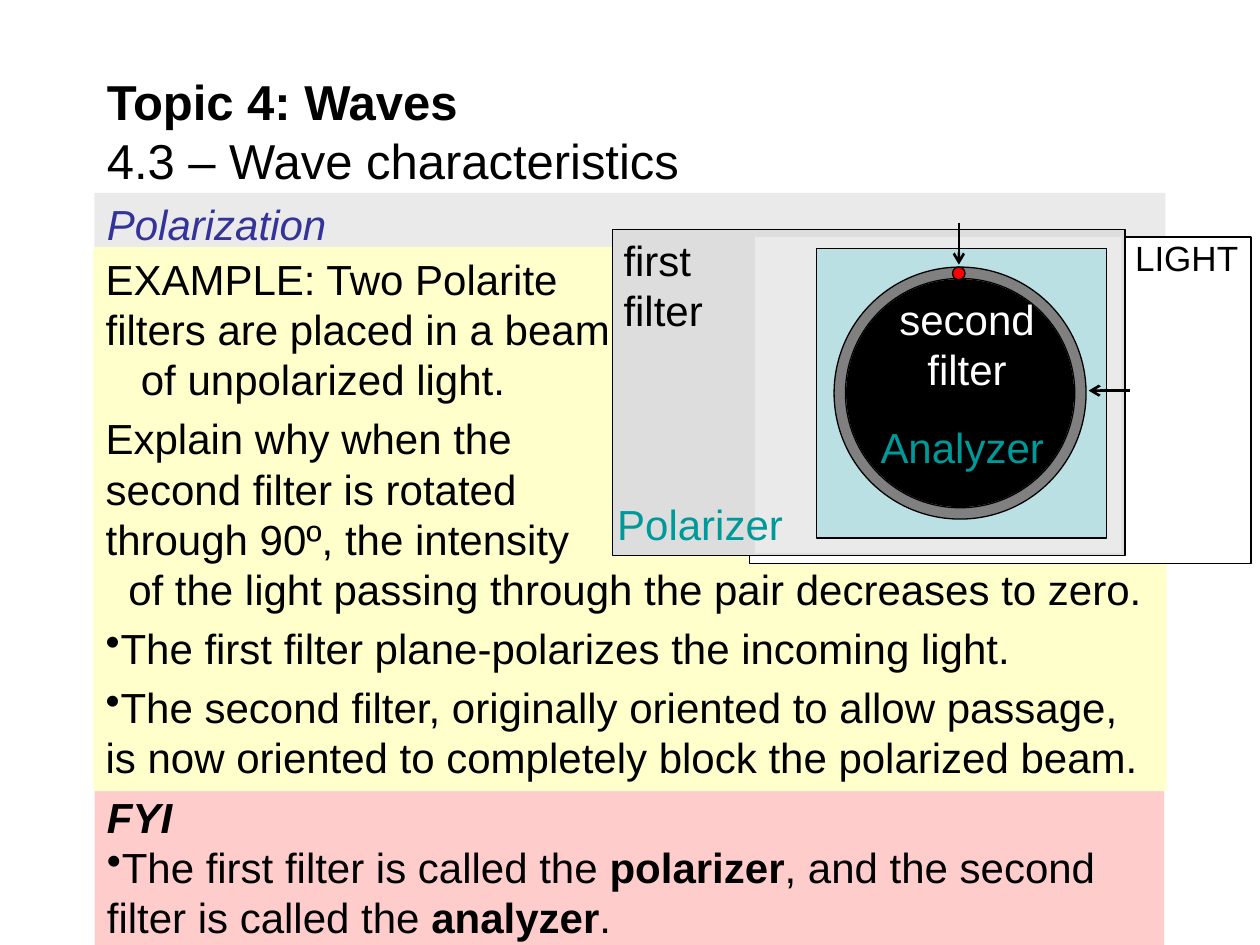
from lxml import etree
from pptx import Presentation
from pptx import util as u
from pptx.dml.color import RGBColor
from pptx.enum import shapes, text
from pptx.oxml.ns import qn

WIDTH, HEIGHT = u.Inches(10), u.Inches(7.5)
COLUMNS, ROWS = 100, 75
COLORS = {
    "black": "000000", "white": "FFFFFF", "pink": "FFCCCC", "pale": "EAEAEA",
    "yellow": "FFFFCC", "silver": "DDDDDD", "sky": "BBE0E3", "gray": "808080",
    "red": "FF0000", "indigo": "333399", "teal": "009999",
}
RECT = shapes.MSO_SHAPE.RECTANGLE
OVAL = shapes.MSO_SHAPE.OVAL
LINE_FACTOR = 1.2
GAP = {"space_before": u.Pt(4.8)}
BOLD = {"bold": True}
CENTER = {"alignment": text.PP_ALIGN.CENTER}


def color(name):
    return RGBColor.from_string(COLORS[name])


def across(columns):
    return round(WIDTH * columns / COLUMNS)


def down(rows):
    return round(HEIGHT * rows / ROWS)


def place(left, top, width, height):
    return across(left), down(top), across(width), down(height)


def apply(target, values):
    for name, value in values.items():
        setattr(target, name, value)


def add_panel(parent, area, fill, outline=True, kind=RECT):
    panel = parent.add_shape(kind, *place(*area))
    panel.shadow.inherit = False
    panel.fill.solid()
    panel.fill.fore_color.rgb = color(fill)
    if outline:
        panel.line.color.rgb = color("black")
        panel.line.width = u.Pt(0.75)
    else:
        panel.line.fill.background()
    return panel


def add_disc(parent, center_x, center_y, size, fill, outline=True):
    area = (center_x - size / 2, center_y - size / 2, size, size)
    return add_panel(parent, area, fill, outline, OVAL)


def indent(para, columns=0, bullet=False):
    properties = para._p.get_or_add_pPr()
    properties.set("marL", str(across(columns)))
    properties.set("indent", "0")
    if bullet:
        etree.SubElement(properties, qn("a:buChar")).set("char", "•")


def write(box, paragraphs, size=24, ink="black", frame_values=None):
    frame = box.text_frame
    apply(frame, {"word_wrap": True, "vertical_anchor": text.MSO_ANCHOR.TOP})
    apply(frame, frame_values or {})
    for index, (spans, values, layout) in enumerate(paragraphs):
        para = frame.paragraphs[0] if index == 0 else frame.add_paragraph()
        apply(para, {"alignment": text.PP_ALIGN.LEFT,
                     "line_spacing": u.Pt(size * LINE_FACTOR)} | values)
        indent(para, **layout)
        for words, style in spans:
            for number, line in enumerate(words.split("\n")):
                if number:
                    para.add_line_break()
                if line:
                    span = para.add_run()
                    span.text = line
                    apply(span.font, {"name": "Arial", "size": u.Pt(size)} | style)
                    span.font.color.rgb = color(ink)


def plain(words, values=None, **layout):
    return [(words, {})], values or {}, layout


def add_label(parent, area, words, size=24, ink="black", wrap=False, values=None):
    box = parent.add_textbox(*place(*area))
    write(box, [plain(words, values)], size, ink,
          {"word_wrap": wrap, "auto_size": text.MSO_AUTO_SIZE.SHAPE_TO_FIT_TEXT})


def add_arrow(parent, start, end):
    arrow = parent.add_connector(
        shapes.MSO_CONNECTOR.STRAIGHT,
        across(start[0]), down(start[1]), across(end[0]), down(end[1]))
    arrow.line.color.rgb = color("black")
    arrow.line.width = u.Pt(1.5)
    etree.SubElement(arrow.line._get_or_add_ln(), qn("a:tailEnd")).set("type", "arrow")
    etree.SubElement(arrow._element.spPr, qn("a:effectLst"))


def add_notes_panels(parent):
    fyi = add_panel(parent, (7.5, 62.3, 84.9, 12.7), "pink", False)
    write(fyi, [
        ([("FYI", {"bold": True, "italic": True})], {}, {}),
        ([("The first filter is called the ", {}), ("polarizer", BOLD),
          (", and the second filter is called the ", {}), ("analyzer", BOLD),
          (".", {})], {}, {"bullet": True}),
    ])
    heading = add_panel(parent, (7.5, 15.3, 85, 4.9), "pale", False)
    write(heading, [([("Polarization", {"italic": True})], GAP, {})], ink="indigo")
    example = add_panel(parent, (7.4, 19.6, 85.2, 43.2), "yellow", False)
    write(example, [
        plain("EXAMPLE: Two Polarite\nfilters are placed in a beam", GAP),
        plain("of unpolarized light.", columns=2.8),
        plain("Explain why when the\nsecond filter is rotated\n"
              "through 90º, the intensity", GAP),
        plain("of the light passing through the pair decreases to zero.", columns=1.8),
        plain("The first filter plane-polarizes the incoming light.", GAP, bullet=True),
        plain("The second filter, originally oriented to allow passage, is now "
              "oriented to completely block the polarized beam.", GAP, bullet=True),
    ])


def add_light(parent):
    light = parent.add_group_shape().shapes
    add_panel(light, (59.5, 18.8, 39.8, 25.9), "white")
    add_label(light, (89.1, 18.3, 10.2, 4.3), "LIGHT", size=20)


def add_polarizer(parent):
    polarizer = parent.add_group_shape().shapes
    add_panel(polarizer, (48.6, 18.2, 40.7, 25.9), "silver")
    add_panel(polarizer, (59.9, 18.8, 29.1, 25.1), "pale", False)
    add_label(polarizer, (48.5, 18.1, 14.1, 9), "first filter", wrap=True)


def add_title(parent):
    title = parent.add_textbox(*place(7.5, 5.8, 85, 9.1))
    write(title, [([("Topic 4: Waves\n", BOLD), ("4.3 – Wave characteristics", {})], {}, {})],
          28, frame_values={"vertical_anchor": text.MSO_ANCHOR.MIDDLE})


def add_analyzer(parent):
    mount = parent.add_group_shape().shapes
    add_panel(mount, (64.8, 19.7, 23, 23), "sky")
    add_arrow(mount, (76.1, 17.7), (76.1, 21))
    add_arrow(mount, (89.7, 31), (86.4, 31))
    ring = mount.add_group_shape().shapes
    add_disc(ring, 76.2, 31.2, 20, "gray")
    add_disc(ring, 76.2, 31.2, 18.2, "silver")
    add_disc(ring, 76.1, 21.7, 1, "red")
    add_disc(parent, 76.2, 31.2, 18.1, "black", False)


def main():
    deck = Presentation()
    apply(deck, {"slide_width": WIDTH, "slide_height": HEIGHT})
    page = deck.slides.add_slide(deck.slide_layouts[6]).shapes
    add_notes_panels(page)
    add_light(page)
    add_polarizer(page)
    add_title(page)
    add_analyzer(page)
    add_label(page, (48, 39.1, 15.2, 5), "Polarizer", ink="teal")
    add_label(page, (68.9, 33, 15, 5), "Analyzer", ink="teal")
    add_label(page, (69.7, 22.8, 14.1, 9), "second filter", ink="white",
              wrap=True, values=CENTER)
    deck.save("out.pptx")


if __name__ == "__main__":
    main()
